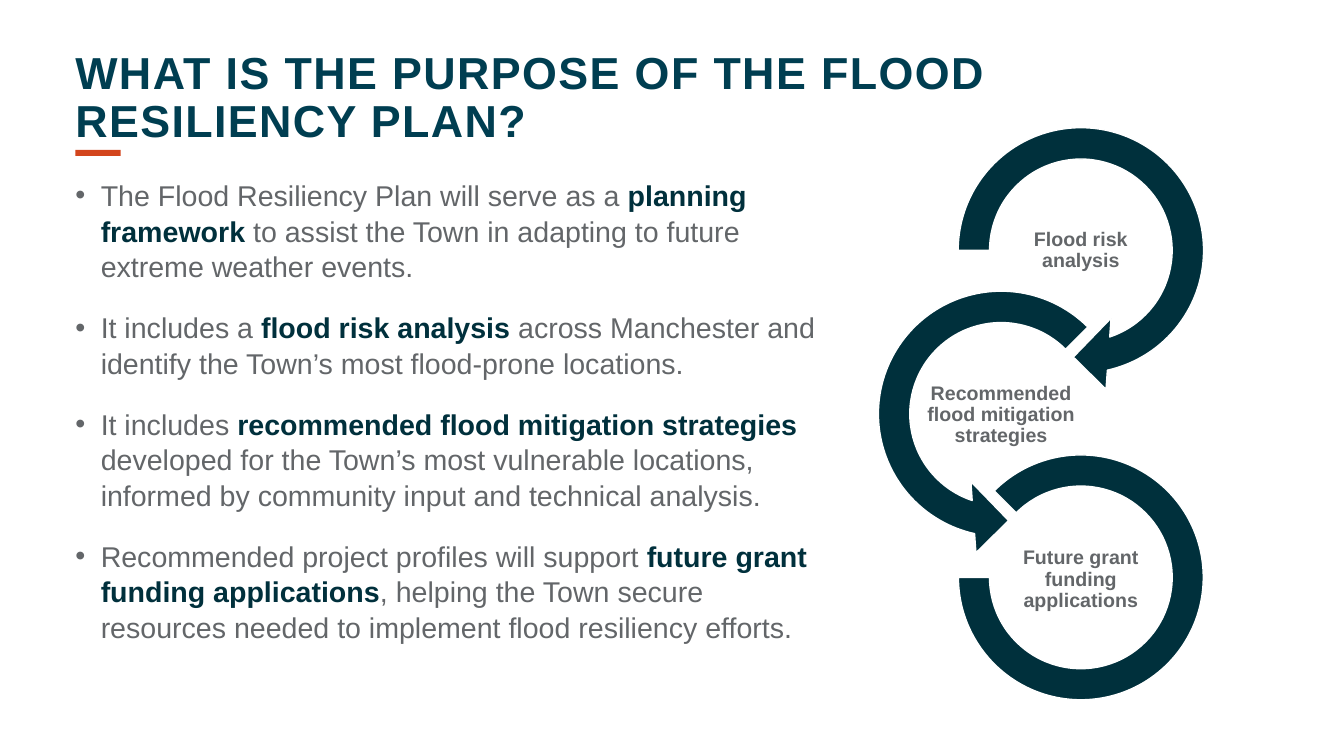
from lxml import etree
from pptx import Presentation
from pptx.dml.color import RGBColor
from pptx.enum.shapes import MSO_SHAPE as Preset
from pptx.enum.text import MSO_ANCHOR as Anchor, PP_ALIGN as Align
from pptx.oxml.ns import qn
from pptx.util import Cm, Pt

COLORS = {
    "title": "003E51",
    "dark": "00303C",
    "body": "636669",
    "accent": "D3451D",
    "white": "FFFFFF",
}


class SlideBuilder:
    font = "Arial"

    def __init__(self, slide):
        self.slide = slide

    def color(self, name):
        return RGBColor.from_string(COLORS[name])

    def text_box(self, left, top, width, height, margin=0, anchor=Anchor.TOP):
        box = self.slide.shapes.add_textbox(Cm(left), Cm(top), Cm(width), Cm(height))
        frame = box.text_frame
        frame.word_wrap = True
        frame.vertical_anchor = anchor
        frame.margin_left = frame.margin_right = Cm(margin)
        frame.margin_top = frame.margin_bottom = Cm(margin)
        return frame

    def run(self, paragraph, text, size, color, bold=False, spacing=None):
        run = paragraph.add_run()
        run.text = text
        run.font.name = self.font
        run.font.size = Pt(size)
        run.font.bold = bold
        run.font.color.rgb = self.color(color)
        if spacing:
            run._r.get_or_add_rPr().set("spc", str(spacing * 100))

    def title(self, text):
        paragraph = self.text_box(1.9, 1.27, 30.05, 1.6).paragraphs[0]
        paragraph.line_spacing = 0.9
        self.run(paragraph, text, 32, "title", bold=True, spacing=1)

    def bullets(self, items):
        frame = self.text_box(1.9, 4.45, 19.13, 12.32)
        for index, (lead, emphasis, rest) in enumerate(items):
            paragraph = frame.add_paragraph() if index else frame.paragraphs[0]
            properties = paragraph._p.get_or_add_pPr()
            properties.set("marL", str(Cm(0.64)))
            properties.set("indent", str(-Cm(0.64)))
            etree.SubElement(properties, qn("a:buFont")).set("typeface", self.font)
            etree.SubElement(properties, qn("a:buChar")).set("char", "•")
            paragraph.line_spacing = 1.04
            if index:
                paragraph.space_before = Pt(18)
            self.run(paragraph, lead, 20.4, "body")
            self.run(paragraph, emphasis, 20.4, "dark", bold=True)
            self.run(paragraph, rest, 20.4, "body")

    def shape(self, preset, left, top, width, height, fill, outline=None, adjustments=()):
        shape = self.slide.shapes.add_shape(
            preset, Cm(left), Cm(top), Cm(width), Cm(height))
        shape.shadow.inherit = False
        shape.fill.solid()
        shape.fill.fore_color.rgb = self.color(fill)
        if outline:
            shape.line.color.rgb = self.color(outline)
            shape.line.width = Pt(1)
        else:
            shape.line.fill.background()
        for index, value in enumerate(adjustments):
            shape.adjustments[index] = value

    def ring(self, preset, center_x, center_y, size, adjustments):
        self.shape(preset, center_x - size / 2, center_y - size / 2, size, size,
                   "dark", "white", adjustments)

    def ring_label(self, center_x, center_y, text):
        width, height = 3.99, 2.01
        frame = self.text_box(center_x - width / 2, center_y - height / 2,
                              width, height, 0.03, Anchor.MIDDLE)
        paragraph = frame.paragraphs[0]
        paragraph.alignment = Align.CENTER
        paragraph.line_spacing = 0.9
        self.run(paragraph, text, 14, "body", bold=True)


def main():
    presentation = Presentation()
    presentation.slide_width, presentation.slide_height = Cm(33.87), Cm(19.05)
    builder = SlideBuilder(presentation.slides.add_slide(presentation.slide_layouts[6]))

    # Purpose of the plan
    builder.bullets([
        ("The Flood Resiliency Plan will serve as a ", "planning framework ",
         "to assist the Town in adapting to future extreme weather events."),
        ("It includes a ", "flood risk analysis ",
         "across Manchester and identify the Town’s most flood-prone locations."),
        ("It includes ", "recommended flood mitigation strategies",
         " developed for the Town’s most vulnerable locations, "
         "informed by community input and technical analysis."),
        ("Recommended project profiles will support ",
         "future grant funding applications",
         ", helping the Town secure resources needed to implement "
         "flood resiliency efforts."),
    ])

    # Title with accent bar
    builder.title("WHAT IS THE PURPOSE OF THE FLOOD RESILIENCY PLAN?")
    builder.shape(Preset.RECTANGLE, 1.9, 3.78, 1.14, 0.15, "accent")

    # Chain of steps, alternating right and left
    right, left = 27.24, 25.23
    steps = [
        ("Flood risk analysis", Preset.CIRCULAR_ARROW, right, 7.19,
         (0.11, 11.423, 45, 108, 0.125)),
        ("Recommended flood mitigation strategies", Preset.LEFT_CIRCULAR_ARROW, left, 7.19,
         (0.11, 11.423, 63, 189, 0.125)),
        ("Future grant funding applications", Preset.BLOCK_ARC, right, 6.17,
         (135, 108, 0.127)),
    ]
    for index, (label, preset, center_x, size, adjustments) in enumerate(steps):
        builder.ring(preset, center_x, 6.31 + 4.12 * index, size, adjustments)
        builder.ring_label(center_x, 6.31 + 4.15 * index, label)

    presentation.save("out.pptx")


if __name__ == "__main__":
    main()
